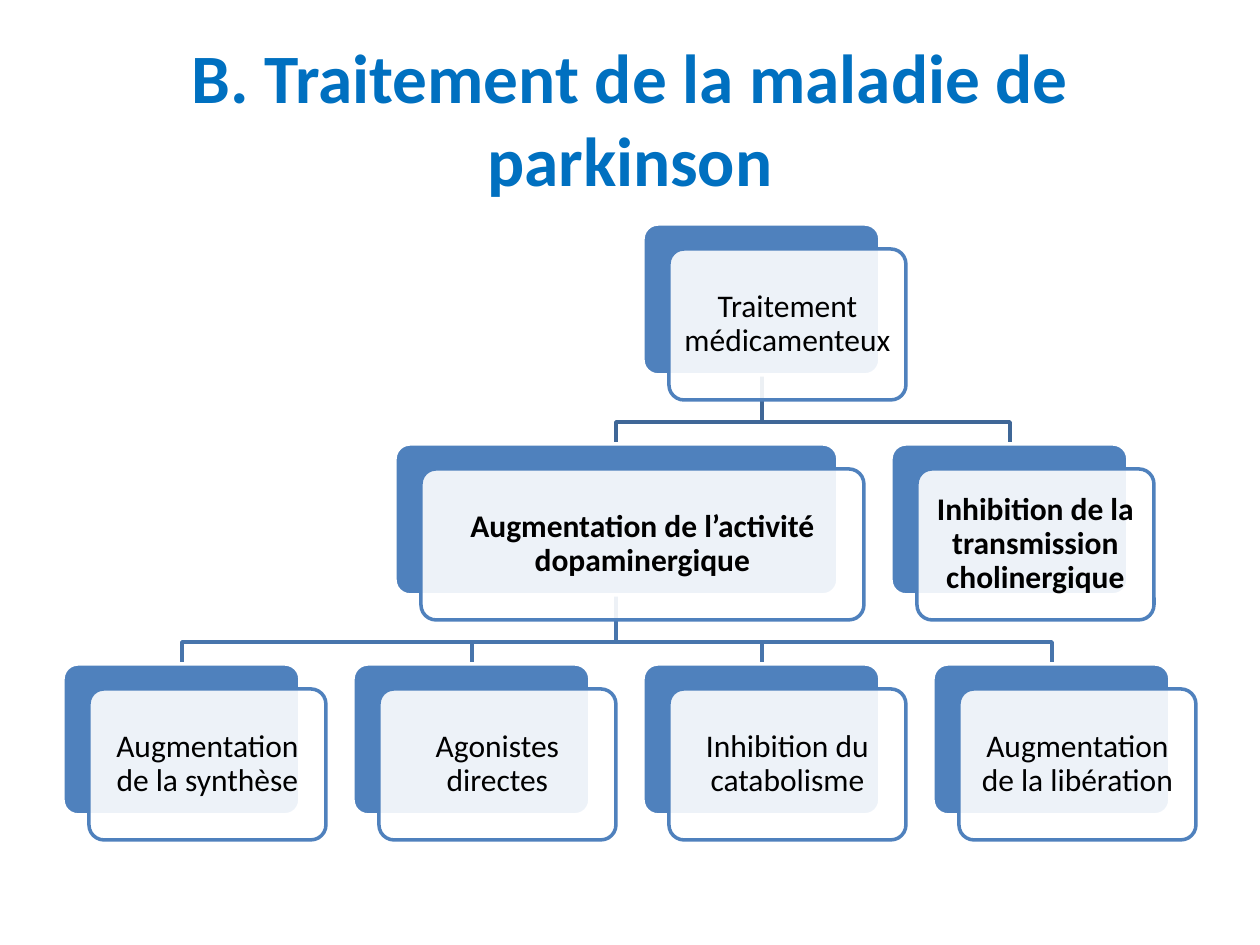
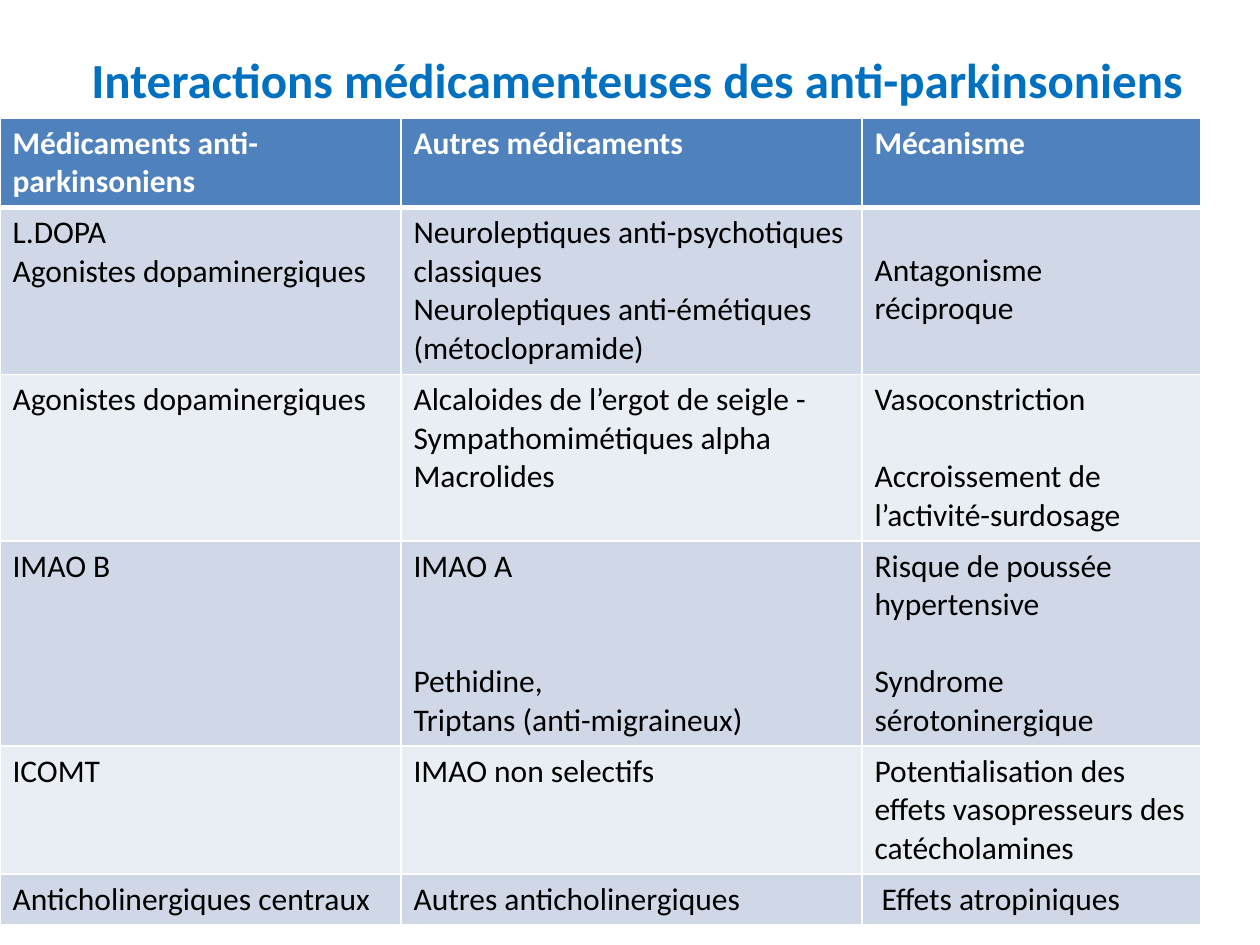
from lxml import etree
from pptx import Presentation
from pptx.dml.color import RGBColor
from pptx.enum.shapes import MSO_SHAPE
from pptx.enum.text import MSO_ANCHOR, MSO_AUTO_SIZE, PP_ALIGN
from pptx.oxml.ns import qn
from pptx.util import Emu, Pt

ROUND_RECT = MSO_SHAPE.ROUNDED_RECTANGLE
MIDDLE = MSO_ANCHOR.MIDDLE
NO_FIT = MSO_AUTO_SIZE.NONE
CENTER = PP_ALIGN.CENTER

TITLE_BLUE = RGBColor(0x00, 0x70, 0xC0)
BLUE = RGBColor(0x4F, 0x81, 0xBD)
ROOT_LINE = RGBColor(0x3F, 0x67, 0x97)
LEAF_LINE = RGBColor(0x48, 0x75, 0xAC)
BAND_DARK = RGBColor(0xD0, 0xD8, 0xE8)
BAND_LIGHT = RGBColor(0xE9, 0xED, 0xF4)
WHITE = RGBColor(0xFF, 0xFF, 0xFF)
BLACK = RGBColor(0x00, 0x00, 0x00)

PX_PER_INCH = 126
SCALE = 914400 / PX_PER_INCH
LINE_PT = 22
LINE_PX = 38

TITLE = {"name": "Calibri", "bold": True}
TITLE["size"] = Pt(28)
BODY = {"name": "Calibri", "size": Pt(18), "bold": False}

TREE_TITLE = "B. Traitement de la maladie de parkinson"
ROOT = "Traitement médicamenteux"
BRANCHES = [
    ("Augmentation de l’activité dopaminergique", 443),
    ("Inhibition de la transmission cholinergique", 237),
]
LEAVES = [
    "Augmentation de la synthèse",
    "Agonistes directes",
    "Inhibition du catabolisme",
    "Augmentation de la libération",
]
LEFT, TOP, CARD_W, CARD_H, GAP = 63, 224, 237, 151, 53
LEVEL_STEP, BAR_RISE, SHIFT_X, SHIFT_Y = 220, 22, 26, 25

TABLE_TITLE = "Interactions médicamenteuses des anti-parkinsoniens"
COLUMN_WIDTHS = [401, 461, 339]
ROW_HEIGHTS = [89, 167, 166, 205, 128, 51]
TABLE_TOP = 118
HEADER = ["Médicaments anti-parkinsoniens", "Autres médicaments", "Mécanisme"]
INTERACTIONS = [
    [
        ["L.DOPA", "Agonistes dopaminergiques"],
        ["Neuroleptiques anti-psychotiques classiques",
         "Neuroleptiques anti-émétiques (métoclopramide)"],
        [(1, "Antagonisme réciproque")],
    ],
    [
        ["Agonistes dopaminergiques"],
        ["Alcaloides de l’ergot de seigle - Sympathomimétiques alpha", "Macrolides"],
        ["Vasoconstriction", (1, "Accroissement de l’activité-surdosage")],
    ],
    [
        ["IMAO B"],
        ["IMAO A", (2, "Pethidine,"), "Triptans (anti-migraineux)"],
        ["Risque de poussée hypertensive", (1, "Syndrome sérotoninergique")],
    ],
    [
        ["ICOMT"],
        ["IMAO non selectifs"],
        ["Potentialisation des effets vasopresseurs des catécholamines"],
    ],
    [
        ["Anticholinergiques centraux"],
        ["Autres anticholinergiques"],
        [" Effets atropiniques"],
    ],
]


def px(n):
    return Emu(round(n * SCALE))


def set_attrs(target, values):
    for name, value in values.items():
        setattr(target, name, value)


def write(p, text, style, color):
    r = p.add_run()
    r.text = text
    set_attrs(r.font, style)
    r.font.color.rgb = color


def add_titled_slide(prs, text, box, size):
    s = prs.slides.add_slide(prs.slide_layouts[5])
    title = s.shapes.title
    set_attrs(title, dict(zip(("left", "top", "width", "height"), map(px, box))))
    tf = title.text_frame
    set_attrs(tf, {"word_wrap": True, "auto_size": NO_FIT, "vertical_anchor": MIDDLE})
    p = tf.paragraphs[0]
    p.alignment = CENTER
    write(p, text, {**TITLE, "size": Pt(size)}, TITLE_BLUE)
    return s


def add_elbow(s, start_x, end_x, level, color):
    start_y = TOP + level * LEVEL_STEP + CARD_H
    end_y = TOP + (level + 1) * LEVEL_STEP
    bar_y = end_y - BAR_RISE
    fb = s.shapes.build_freeform(start_x, start_y, scale=SCALE)
    fb.add_line_segments([(start_x, bar_y), (end_x, bar_y), (end_x, end_y)], close=False)
    sp = fb.convert_to_shape()
    sp.shadow.inherit = False
    sp.fill.background()
    sp.line.color.rgb = color
    sp.line.width = Pt(2)


def add_plate(s, x, y, w, fill, line):
    sp = s.shapes.add_shape(ROUND_RECT, px(x), px(y), px(w), px(CARD_H))
    sp.adjustments[0] = 0.1
    sp.shadow.inherit = False
    sp.fill.solid()
    sp.fill.fore_color.rgb = fill
    sp.line.color.rgb = line
    sp.line.width = Pt(2)
    return sp


def add_card(s, text, x, level, w, bold):
    y = TOP + level * LEVEL_STEP
    add_plate(s, x, y, w, BLUE, WHITE)
    front = add_plate(s, x + SHIFT_X, y + SHIFT_Y, w, WHITE, BLUE)
    fill_color = next(front.element.spPr.iter(qn("a:srgbClr")))
    etree.SubElement(fill_color, qn("a:alpha"), val="90000")
    tf = front.text_frame
    set_attrs(tf, {"word_wrap": True, "vertical_anchor": MIDDLE})
    set_attrs(tf, {f"margin_{side}": px(5) for side in ("left", "top", "right", "bottom")})
    p = tf.paragraphs[0]
    set_attrs(p, {"alignment": CENTER, "line_spacing": 0.9})
    write(p, text, {**BODY, "bold": bold}, BLACK)


def build_tree(prs):
    s = add_titled_slide(prs, TREE_TITLE, (63, 38, 1134, 158), 39.6)
    leaf_lefts = [LEFT + i * (CARD_W + GAP) for i in range(len(LEAVES))]
    hub_x = (leaf_lefts[0] + leaf_lefts[-1] + CARD_W) / 2
    x = branch_left = hub_x - BRANCHES[0][1] / 2
    branch_lefts = []
    for _, w in BRANCHES:
        branch_lefts.append(x)
        x += w + GAP
    root_x = (branch_left + x - GAP) / 2

    for left, (_, w) in zip(branch_lefts, BRANCHES):
        add_elbow(s, root_x, left + w / 2, 0, ROOT_LINE)
    for left in leaf_lefts:
        add_elbow(s, hub_x, left + CARD_W / 2, 1, LEAF_LINE)

    add_card(s, ROOT, root_x - CARD_W / 2, 0, CARD_W, False)
    for left, (text, w) in zip(branch_lefts, BRANCHES):
        add_card(s, text, left, 1, w, True)
    for left, text in zip(leaf_lefts, LEAVES):
        add_card(s, text, left, 2, CARD_W, False)


def set_borders(cell, widths):
    tc_pr = cell._tc.get_or_add_tcPr()
    for i, (side, width) in enumerate(widths.items()):
        ln = etree.Element(qn(f"a:ln{side}"), w=str(Pt(width)))
        solid = etree.SubElement(ln, qn("a:solidFill"))
        etree.SubElement(solid, qn("a:srgbClr"), val=str(WHITE))
        tc_pr.insert(i, ln)


def fill_cell(cell, lines, row):
    header = row == 0
    cell.fill.solid()
    cell.fill.fore_color.rgb = BLUE if header else (BAND_LIGHT, BAND_DARK)[row % 2]
    set_borders(cell, {"L": 1, "R": 1, "T": 3 if row == 1 else 1, "B": 3 if header else 1})
    tf = cell.text_frame
    for i, line in enumerate(lines):
        skipped, text = line if isinstance(line, tuple) else (0, line)
        p = tf.add_paragraph() if i else tf.paragraphs[0]
        if skipped and i:
            p.space_before = Pt(skipped * LINE_PT)
        elif skipped:
            cell.margin_top = px(6 + skipped * LINE_PX)
        write(p, text, {**BODY, "bold": header}, WHITE if header else BLACK)


def build_table(prs):
    s = add_titled_slide(prs, TABLE_TITLE, (14, 0, 1246, 158), 28)
    rows = [[[text] for text in HEADER]] + INTERACTIONS
    table = s.shapes.add_table(
        len(rows), len(HEADER), 0, px(TABLE_TOP), px(sum(COLUMN_WIDTHS)), px(sum(ROW_HEIGHTS))
    ).table
    for column, width in zip(table.columns, COLUMN_WIDTHS):
        column.width = px(width)
    for i, (cells, height) in enumerate(zip(rows, ROW_HEIGHTS)):
        table.rows[i].height = px(height)
        for j, lines in enumerate(cells):
            fill_cell(table.cell(i, j), lines, i)


def main():
    prs = Presentation()
    prs.slide_width, prs.slide_height = px(1260), px(945)
    build_tree(prs)
    build_table(prs)
    prs.save("out.pptx")


if __name__ == "__main__":
    main()
